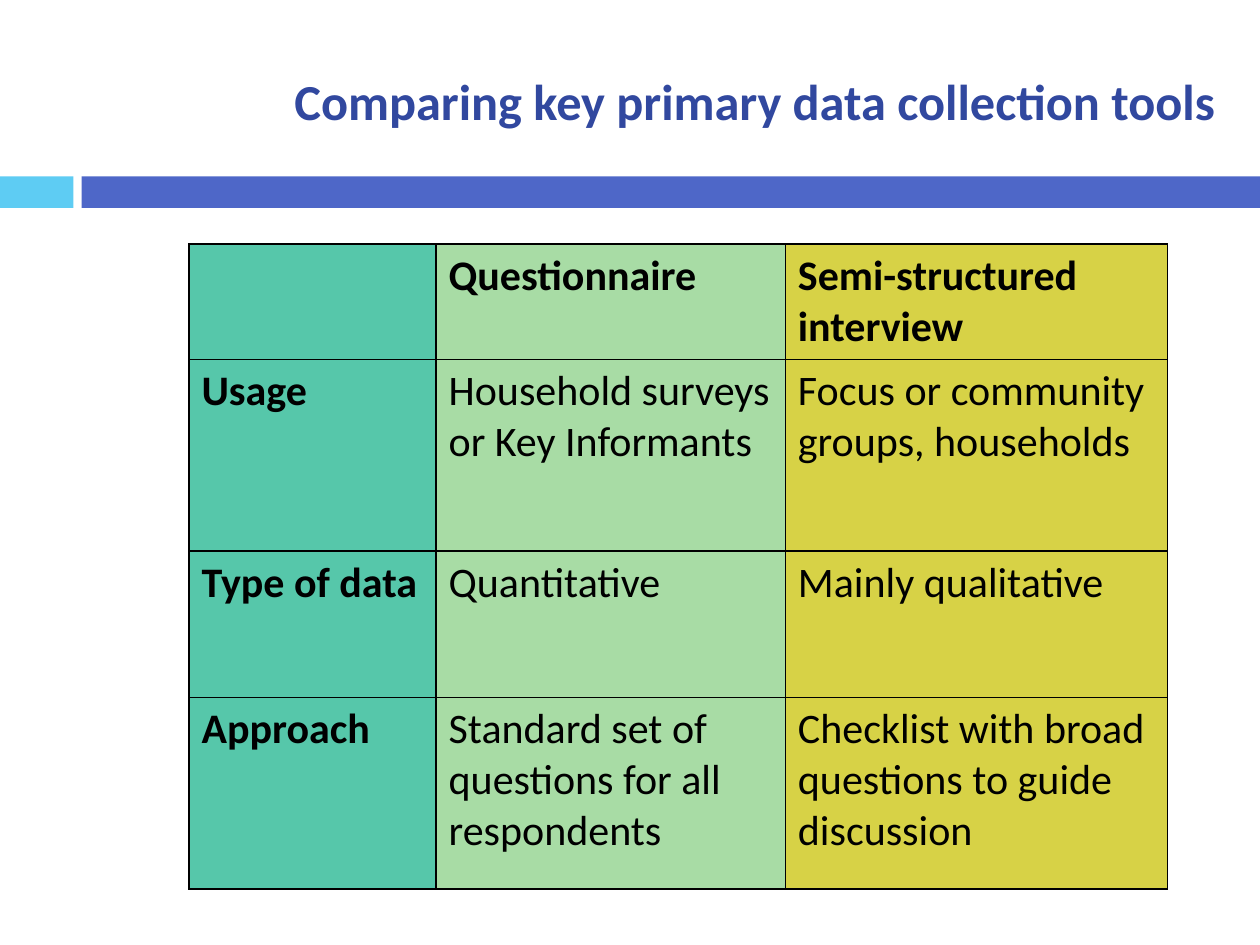
from dataclasses import dataclass
from lxml.etree import SubElement as Sub
from pptx import Presentation
from pptx.dml.color import RGBColor as Rgb
from pptx.enum.shapes import MSO_SHAPE as Shape
from pptx.enum.text import MSO_ANCHOR as Anchor, PP_ALIGN as Align
from pptx.oxml.ns import qn
from pptx.util import Pt


@dataclass(frozen=True)
class Theme:
    font: str = "Calibri"
    head: float = 28.8
    body: float = 24
    title: str = "31489F"
    text: str = "000000"
    edge: str = "000000"
    sky: str = "5ECCF3"
    blue: str = "4E67C8"
    cols: tuple = ("56C7AA", "A8DCA5", "D7D246")


def write(frame, text, font, size, color, bold=False, align=Align.LEFT):
    para = frame.paragraphs[0]
    para.alignment = align
    run = para.add_run()
    run.text = text
    style = run.font
    style.name, style.size, style.bold = font, Pt(size), bold
    style.color.rgb = Rgb.from_string(color)


def paint(item, color):
    item.fill.solid()
    item.fill.fore_color.rgb = Rgb.from_string(color)


def frame_cell(cell, color, width=1):
    props = cell._tc.get_or_add_tcPr()
    for spot, side in enumerate(("lnL", "lnR", "lnT", "lnB")):
        line = Sub(props, qn(f"a:{side}"), w=str(Pt(width)))
        fill = Sub(line, qn("a:solidFill"))
        Sub(fill, qn("a:srgbClr"), val=color)
        props.insert(spot, line)


class Deck:
    def __init__(self, theme):
        self.theme = theme
        self.file = Presentation()
        self.file.slide_width, self.file.slide_height = Pt(720), Pt(540)
        self.slide = self.file.slides.add_slide(self.file.slide_layouts[5])

    def bar(self, left, top, width, height, color):
        box = self.slide.shapes.add_shape(
            Shape.RECTANGLE, Pt(left), Pt(top), Pt(width), Pt(height))
        box.shadow.inherit = False
        paint(box, color)
        box.line.fill.background()

    def title(self, text, left, top, width, height):
        look = self.theme
        box = self.slide.shapes.title
        box.left, box.top = Pt(left), Pt(top)
        box.width, box.height = Pt(width), Pt(height)
        box.text_frame.vertical_anchor = Anchor.MIDDLE
        write(box.text_frame, text, look.font, look.head, look.title,
              bold=True, align=Align.RIGHT)

    def table(self, data, left, top, widths, heights):
        look = self.theme
        grid = self.slide.shapes.add_table(
            len(heights), len(widths), Pt(left), Pt(top),
            Pt(sum(widths)), Pt(sum(heights))).table
        for col, width in zip(grid.columns, widths):
            col.width = Pt(width)
        for row, height in zip(grid.rows, heights):
            row.height = Pt(height)
        for r, row in enumerate(data):
            for c, text in enumerate(row):
                cell = grid.cell(r, c)
                paint(cell, look.cols[c])
                frame_cell(cell, look.edge)
                if text:
                    write(cell.text_frame, text, look.font, look.body,
                          look.text, bold=r == 0 or c == 0)


def main():
    theme = Theme()
    deck = Deck(theme)
    deck.bar(0, 100.8, 42, 18, theme.sky)
    deck.bar(46.6, 100.8, 673.4, 18, theme.blue)
    data = (
        ("", "Questionnaire", "Semi-structured interview"),
        ("Usage", "Household surveys or Key Informants",
         "Focus or community groups, households"),
        ("Type of data", "Quantitative", "Mainly qualitative"),
        ("Approach", "Standard set of questions for all respondents",
         "Checklist with broad questions to guide discussion"),
    )
    deck.table(data, 108, 139.5, (141.2, 199.6, 218.5),
               (57.6, 109.6, 83.6, 109.6))
    deck.title("Comparing key primary data collection tools",
               108, 26, 594, 62.6)
    deck.file.save("out.pptx")


if __name__ == "__main__":
    main()
